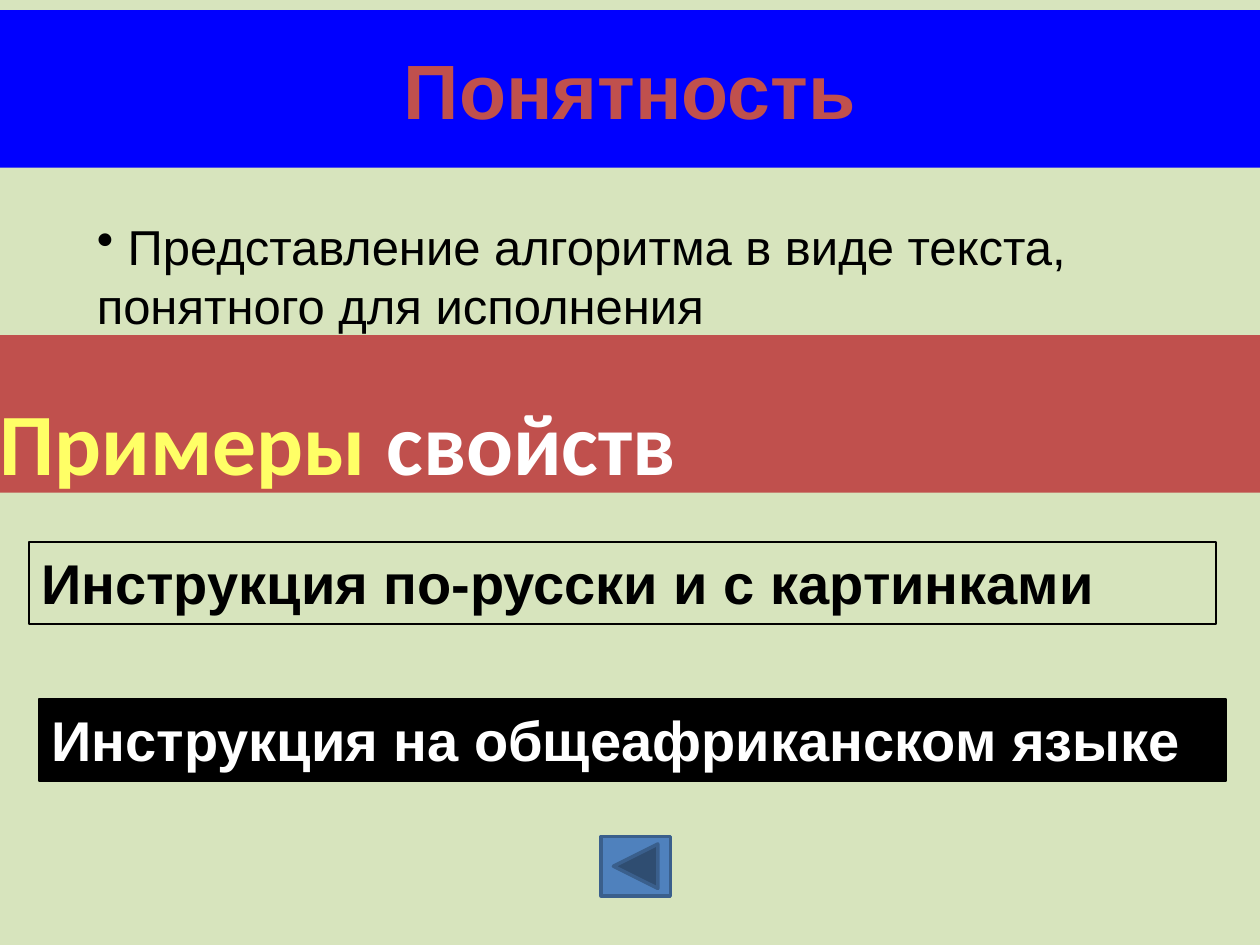
import dataclasses

import pptx
import pptx.dml.color
import pptx.enum.shapes
import pptx.enum.text
import pptx.oxml
import pptx.oxml.ns
import pptx.util

Inches = pptx.util.Inches
Pt = pptx.util.Pt
MSO_SHAPE = pptx.enum.shapes.MSO_SHAPE
ANCHOR = pptx.enum.text.MSO_ANCHOR
ALIGN = pptx.enum.text.PP_ALIGN


@dataclasses.dataclass(frozen=True)
class Theme:
    background: str = "D7E4BD"
    blue: str = "0000FF"
    red: str = "C0504D"
    yellow: str = "FFFF66"
    white: str = "FFFFFF"
    black: str = "000000"
    button: str = "4F81BD"
    button_line: str = "3A5F8C"
    body_font: str = "Arial"
    banner_font: str = "Calibri"
    title_size: int = 44
    definition_size: int = 28
    banner_size: int = 50
    example_size: int = 32


THEME = Theme()


def rgb(color):
    return pptx.dml.color.RGBColor.from_string(color)


def paint(shape, fill=None, line=None, width=1):
    if fill:
        shape.fill.solid()
        shape.fill.fore_color.rgb = rgb(fill)
    else:
        shape.fill.background()
    if line:
        shape.line.color.rgb = rgb(line)
        shape.line.width = Pt(width)
    else:
        shape.line.fill.background()


def style(font, name, size, color=None, bold=False):
    font.name = name
    font.size = Pt(size)
    font.bold = bold
    if color:
        font.color.rgb = rgb(color)


def add_box(slide, box, preset=MSO_SHAPE.RECTANGLE):
    shape = slide.shapes.add_shape(preset, *map(Inches, box))
    shape.shadow.inherit = False
    return shape


def place_title(slide, box):
    title = slide.shapes.title
    title.left, title.top, title.width, title.height = map(Inches, box)
    paint(title, THEME.blue)
    title.text_frame.text = "Понятность"
    title.text_frame.vertical_anchor = ANCHOR.MIDDLE
    heading = title.text_frame.paragraphs[0]
    heading.alignment = ALIGN.CENTER
    style(heading.font, THEME.body_font, THEME.title_size, THEME.red, True)


def add_definition(slide, box):
    frame = slide.shapes.add_textbox(*map(Inches, box)).text_frame
    frame.word_wrap = True
    definition = frame.paragraphs[0]
    definition.text = " Представление алгоритма в виде текста, понятного для исполнения"
    bullet = pptx.oxml.parse_xml(
        f'<a:buChar {pptx.oxml.ns.nsdecls("a")} char="•"/>')
    definition._p.get_or_add_pPr().append(bullet)
    style(definition.font, THEME.body_font, THEME.definition_size, THEME.black)


def add_banner(slide, box):
    banner = add_box(slide, box)
    paint(banner, THEME.red)
    frame = banner.text_frame
    frame.word_wrap = True
    frame.vertical_anchor = ANCHOR.BOTTOM
    frame.margin_left = frame.margin_right = frame.margin_bottom = 0
    frame.margin_top = Inches(0.05)
    heading = frame.paragraphs[0]
    heading.alignment = ALIGN.LEFT
    style(heading.font, THEME.banner_font, THEME.banner_size, bold=True)
    for words, color in (("Примеры ", THEME.yellow), ("свойств", THEME.white)):
        run = heading.add_run()
        run.text = words
        run.font.color.rgb = rgb(color)


def add_example(slide, box, words, color, fill=None):
    example = add_box(slide, box)
    paint(example, fill, THEME.black)
    frame = example.text_frame
    frame.word_wrap = True
    frame.vertical_anchor = ANCHOR.TOP
    line = frame.paragraphs[0]
    line.text = words
    line.alignment = ALIGN.LEFT
    style(line.font, THEME.body_font, THEME.example_size, color, True)


def add_back_button(slide, box):
    button = add_box(slide, box, MSO_SHAPE.ACTION_BUTTON_BACK_OR_PREVIOUS)
    paint(button, THEME.button, THEME.button_line, 2)


def main():
    deck = pptx.Presentation()
    deck.slide_width, deck.slide_height = Inches(10), Inches(7.5)
    slide = deck.slides.add_slide(deck.slide_layouts.get_by_name("Title Only"))
    slide.background.fill.solid()
    slide.background.fill.fore_color.rgb = rgb(THEME.background)

    place_title(slide, (0, 0.08, 10, 1.25))
    add_definition(slide, (0.67, 1.67, 8.5, 1.94))
    add_banner(slide, (0, 2.66, 10, 1.25))
    add_example(slide, (0.23, 4.3, 9.42, 0.65),
                "Инструкция по-русски и с картинками", THEME.black)
    add_example(slide, (0.31, 5.55, 9.42, 0.65),
                "Инструкция на общеафриканском языке", THEME.white, THEME.black)
    add_back_button(slide, (4.77, 6.64, 0.55, 0.47))
    deck.save("out.pptx")


if __name__ == "__main__":
    main()
